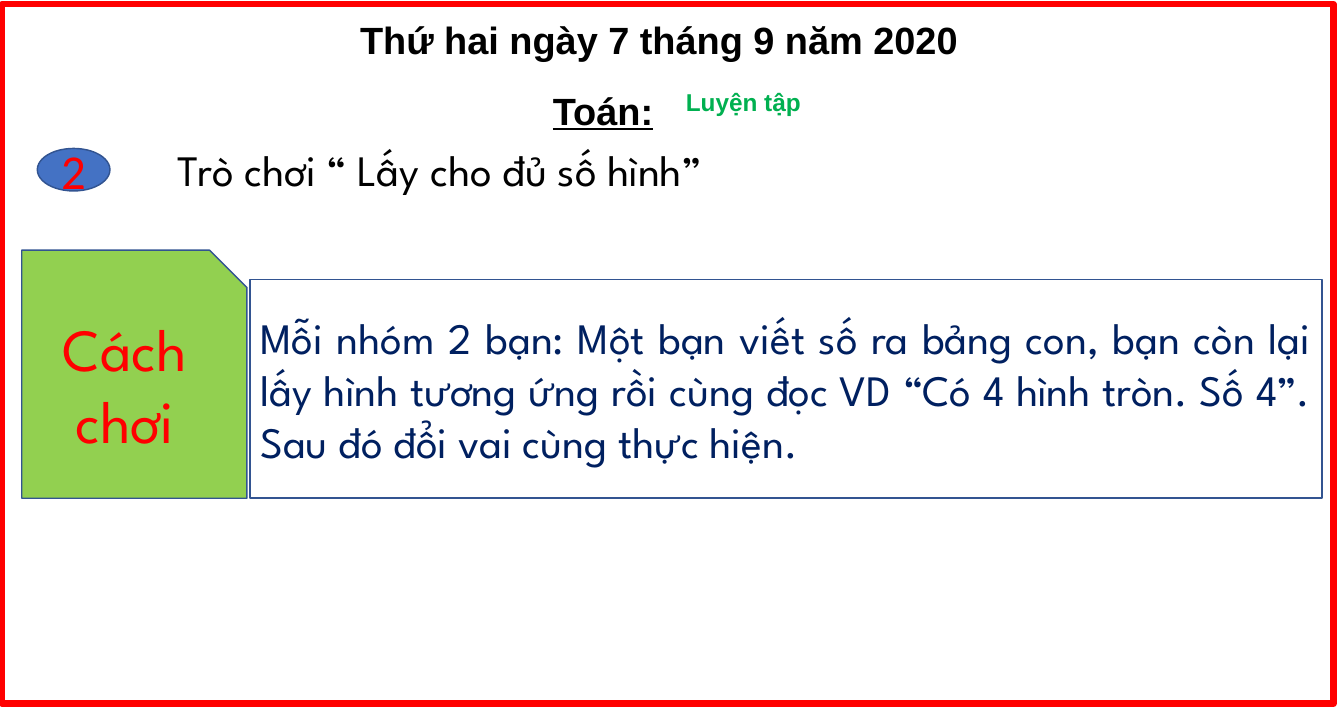
from lxml import etree
from pptx import Presentation
from pptx.dml.color import RGBColor
from pptx.enum.shapes import MSO_SHAPE
from pptx.enum.text import MSO_ANCHOR, MSO_AUTO_SIZE, PP_ALIGN
from pptx.oxml.ns import qn
from pptx.util import Inches, Pt

OVAL, RECT, SNIPPED = MSO_SHAPE.OVAL, MSO_SHAPE.RECTANGLE, MSO_SHAPE.SNIP_1_RECTANGLE
LEFT, CENTER, JUSTIFY = PP_ALIGN.LEFT, PP_ALIGN.CENTER, PP_ALIGN.JUSTIFY
MIDDLE = MSO_ANCHOR.MIDDLE
FIT_TEXT = MSO_AUTO_SIZE.SHAPE_TO_FIT_TEXT

HEADING_FONT, BODY_FONT, NUMBER_FONT = "Arial", "League Spartan", "Calibri"
BLACK, RED, GREEN, NAVY = "000000", "FF0000", "00B050", "002060"
BLUE, LIME, EDGE, TEXT_EDGE = "4472C4", "92D050", "325491", "3A5274"


def rgb(color):
    """Turn a hex string into a colour."""
    return RGBColor.from_string(color)


def write(holder, words, size, font_name, color, align=CENTER, bold=False, underline=False):
    """Write one formatted paragraph and return its run."""
    frame = holder.text_frame
    frame.word_wrap = True
    frame.text = words
    paragraph = frame.paragraphs[0]
    paragraph.alignment = align
    run = paragraph.runs[0]
    font = run.font
    font.size = Pt(size)
    font.name = font_name
    font.bold = bold
    font.underline = underline
    font.color.rgb = rgb(color)
    return run


def add_label(slide, box, words, size, font_name, color, **style):
    """Add a text box that grows with its words and return its run."""
    label = slide.shapes.add_textbox(*map(Inches, box))
    run = write(label, words, size, font_name, color, **style)
    label.text_frame.auto_size = FIT_TEXT
    return run


def add_panel(slide, kind, box, fill=None, edge=EDGE, edge_width=1):
    """Add an outlined preset shape."""
    panel = slide.shapes.add_shape(kind, *map(Inches, box))
    panel.shadow.inherit = False
    if fill:
        panel.fill.solid()
        panel.fill.fore_color.rgb = rgb(fill)
    else:
        panel.fill.background()
    panel.line.color.rgb = rgb(edge)
    panel.line.width = Pt(edge_width)
    panel.text_frame.vertical_anchor = MIDDLE
    return panel


def outline_text(run, color):
    """Give the letters of a run a thin outline."""
    outline = etree.Element(qn("a:ln"), w=str(Pt(1)))
    fill = etree.SubElement(outline, qn("a:solidFill"))
    etree.SubElement(fill, qn("a:srgbClr"), val=color)
    run.font._element.insert(0, outline)


def add_heading(slide, left, top, width):
    """Add the date, the subject and the lesson title."""
    add_label(slide, (left, top, width, 0.56), "Thứ hai ngày 7 tháng 9 năm 2020",
              26.3, HEADING_FONT, BLACK, bold=True)
    second_row = top + 0.68
    add_label(slide, (left + 4.06, second_row, 2.38, 0.56), "Toán:",
              26.3, HEADING_FONT, BLACK, bold=True, underline=True)
    lesson = add_label(slide, (left + 5.95, second_row, 2.38, 0.39), "Luyện tập",
                       16.9, HEADING_FONT, GREEN, align=LEFT, bold=True)
    outline_text(lesson, TEXT_EDGE)


def add_activity(slide, left, top):
    """Add the numbered activity title."""
    add_label(slide, (left + 0.27, top, 7.22, 0.62), "Trò chơi “ Lấy cho đủ số hình”",
              30.1, BODY_FONT, BLACK)
    badge = add_panel(slide, OVAL, (left, top + 0.1, 0.7, 0.41), BLUE)
    write(badge, "2", 33.8, NUMBER_FONT, RED)


def add_rules(slide, left, top, width, height):
    """Add the how-to-play tab with its instructions."""
    tab = add_panel(slide, SNIPPED, (left, top, 2.17, height), LIME)
    write(tab, "Cách chơi", 41.4, BODY_FONT, RED)
    indent, drop = 2.2, 0.28
    rules = add_panel(slide, RECT, (left + indent, top + drop, width - indent, height - drop))
    write(rules, "Mỗi nhóm 2 bạn: Một bạn viết số ra bảng con, bạn còn lại lấy hình "
          "tương ứng rồi cùng đọc VD “Có 4 hình tròn. Số 4”. Sau đó đổi vai cùng thực hiện.",
          30.1, BODY_FONT, NAVY, align=JUSTIFY)


def main():
    """Build the lesson slide."""
    deck = Presentation()
    deck.slide_width, deck.slide_height = Inches(12.95), Inches(6.85)
    slide = deck.slides.add_slide(deck.slide_layouts[6])
    add_heading(slide, 0.56, 0.11, 11.58)
    add_activity(slide, 0.36, 1.33)
    add_rules(slide, 0.21, 2.41, 12.53, 2.39)
    add_panel(slide, RECT, (0.02, 0.04, 12.83, 6.74), edge=RED, edge_width=4.5)
    deck.save("out.pptx")


if __name__ == "__main__":
    main()
